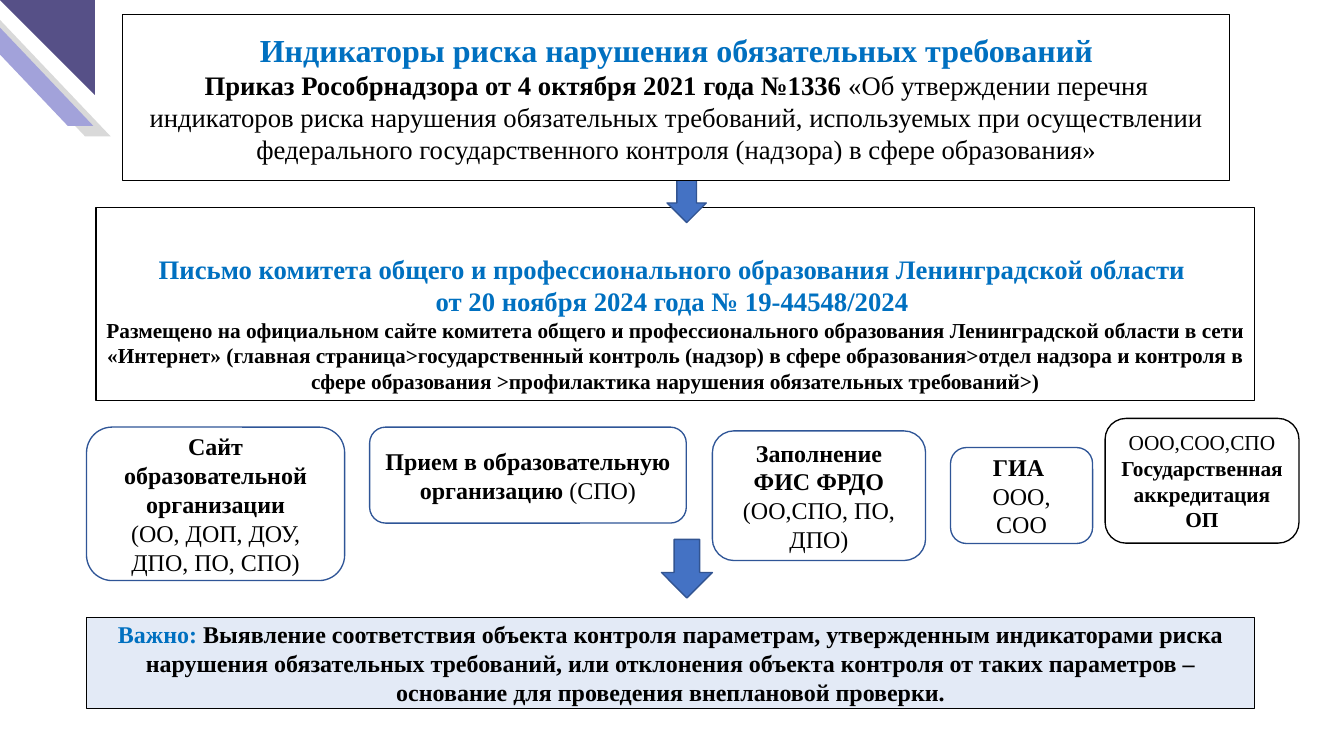
from pptx import Presentation
from pptx.dml.color import RGBColor
from pptx.enum.shapes import MSO_SHAPE
from pptx.enum.text import MSO_ANCHOR, MSO_AUTO_SIZE, PP_ALIGN
from pptx.oxml.ns import qn
from pptx.util import Cm, Pt

RECT = MSO_SHAPE.RECTANGLE
ROUND = MSO_SHAPE.ROUNDED_RECTANGLE
ARROW = MSO_SHAPE.DOWN_ARROW
SLANT = MSO_SHAPE.PARALLELOGRAM
WEDGE = MSO_SHAPE.RIGHT_TRIANGLE
CENTER = PP_ALIGN.CENTER
MIDDLE = MSO_ANCHOR.MIDDLE
TOP = MSO_ANCHOR.TOP
FIXED = MSO_AUTO_SIZE.NONE

COLORS = {
    "white": "FFFFFF", "black": "000000", "head": "0070C0",
    "edge": "2F5597", "arrow": "4472C4", "rim": "325491",
    "pale": "E3EAF6", "gray": "D9D9D9", "lilac": "A2A2DA", "plum": "565087",
}
FONT = {"name": "Times New Roman", "italic": False}

TITLE = [
    [("Индикаторы риска нарушения обязательных требований", 24, True, "head")],
    [("Приказ Рособрнадзора от 4 октября 2021 года №1336 ", 20, True, "black"),
     ("«Об утверждении перечня индикаторов риска нарушения обязательных "
      "требований, используемых при осуществлении федерального "
      "государственного контроля (надзора) в сфере образования»",
      20, False, "black")],
]
LETTER = [
    [("Письмо комитета общего и профессионального образования "
      "Ленинградской области ", 20, True, "head")],
    [("от 20 ноября 2024 года № 19-44548/2024 ", 20, True, "head")],
    [("Размещено на официальном сайте комитета общего и профессионального "
      "образования Ленинградской области в сети «Интернет» (главная "
      "страница>государственный контроль (надзор) в сфере "
      "образования>отдел надзора и контроля в сфере образования "
      ">профилактика нарушения обязательных требований>)",
      16, True, "black")],
]
NOTE = [
    [("Важно: ", 18, True, "head"),
     ("Выявление соответствия объекта контроля параметрам, утвержденным "
      "индикаторами риска нарушения обязательных требований, или отклонения "
      "объекта контроля от таких параметров – основание для проведения "
      "внеплановой проверки.", 18, True, "black")],
]
CARDS = [
    ((2.29, 11.3, 6.83, 4.06), "edge", [
        [("Сайт образовательной организации", 18, True, "black")],
        [("(ОО, ДОП, ДОУ, ДПО, ПО, СПО)", 18, False, "black")]]),
    ((9.78, 11.3, 8.38, 2.54), "edge", [
        [("Прием в образовательную организацию ", 18, True, "black"),
         ("(СПО)", 18, False, "black")]]),
    ((18.85, 11.4, 5.64, 3.43), "edge", [
        [("Заполнение ФИС ФРДО", 18, True, "black")],
        [("(ОО,СПО, ПО, ДПО)", 18, False, "black")]]),
    ((25.15, 11.84, 3.76, 2.54), "edge", [
        [("ГИА ", 18, True, "black")],
        [("ООО, СОО", 18, False, "black")]]),
    ((29.24, 11.07, 5.13, 3.3), "black", [
        [("ООО,СОО,СПО", 16, False, "black")],
        [("Государственная аккредитация ОП", 16, True, "black")]]),
]


def tint(name):
    return RGBColor.from_string(COLORS[name])


def put(item, values):
    for key, value in values.items():
        setattr(item, key, value)


def paint(shape, fill, line):
    shape.fill.solid()
    shape.fill.fore_color.rgb = tint(fill)
    if line:
        shape.line.color.rgb = tint(line)
        shape.line.width = Pt(1)
    else:
        shape.line.fill.background()


def draw(slide, kind, box, fill, line=None):
    shape = slide.shapes.add_shape(kind, *map(Cm, box))
    shape.shadow.inherit = False
    paint(shape, fill, line)
    return shape


def write(shape, paras, anchor=MIDDLE, inset=0.13):
    frame = shape.text_frame
    put(frame, {"word_wrap": True, "auto_size": FIXED,
                "vertical_anchor": anchor, "margin_top": Cm(inset),
                "margin_bottom": Cm(0.13), "margin_left": Cm(0.25),
                "margin_right": Cm(0.25)})
    for num, runs in enumerate(paras):
        para = frame.add_paragraph() if num else frame.paragraphs[0]
        put(para, {"alignment": CENTER, "line_spacing": 1.0,
                   "space_before": Pt(0)})
        for text, size, bold, color in runs:
            run = para.add_run()
            run.text = text
            put(run.font, {**FONT, "size": Pt(size), "bold": bold})
            run.font.color.rgb = tint(color)


def add_corner(slide):
    for left, top, fill in ((-0.91, 0.28, "gray"), (-1.37, 0, "lilac")):
        band = draw(slide, SLANT, (left, top, 3.84, 3.33), fill)
        band.adjustments[0] = 0.95
        band.element.spPr.find(qn("a:xfrm")).set("flipH", "1")
    draw(slide, WEDGE, (0, 0, 2.51, 2.51), "plum").rotation = 180


def add_title(slide, box, below):
    title = slide.shapes.title
    put(title, dict(zip(("left", "top", "width", "height"), map(Cm, box))))
    paint(title, "white", "black")
    write(title, TITLE)
    below.element.addnext(title.element)


def main():
    deck = Presentation()
    put(deck, {"slide_width": Cm(35.56), "slide_height": Cm(20)})
    slide = deck.slides.add_slide(deck.slide_layouts[5])
    add_corner(slide)
    letter = draw(slide, RECT, (2.54, 5.49, 30.66, 5.11), "white", "black")
    write(letter, LETTER, TOP, 1.2)
    arrow = draw(slide, ARROW, (17.65, 4.52, 1.04, 1.37), "arrow", "rim")
    add_title(slide, (3.25, 0.38, 29.29, 4.39), arrow)
    for box, line, paras in CARDS:
        write(draw(slide, ROUND, box, "white", line), paras)
    draw(slide, ARROW, (17.5, 14.27, 1.35, 1.55), "arrow", "rim")
    note = draw(slide, RECT, (2.29, 16.33, 30.91, 2.41), "pale", "black")
    write(note, NOTE)
    deck.save("out.pptx")


if __name__ == "__main__":
    main()
